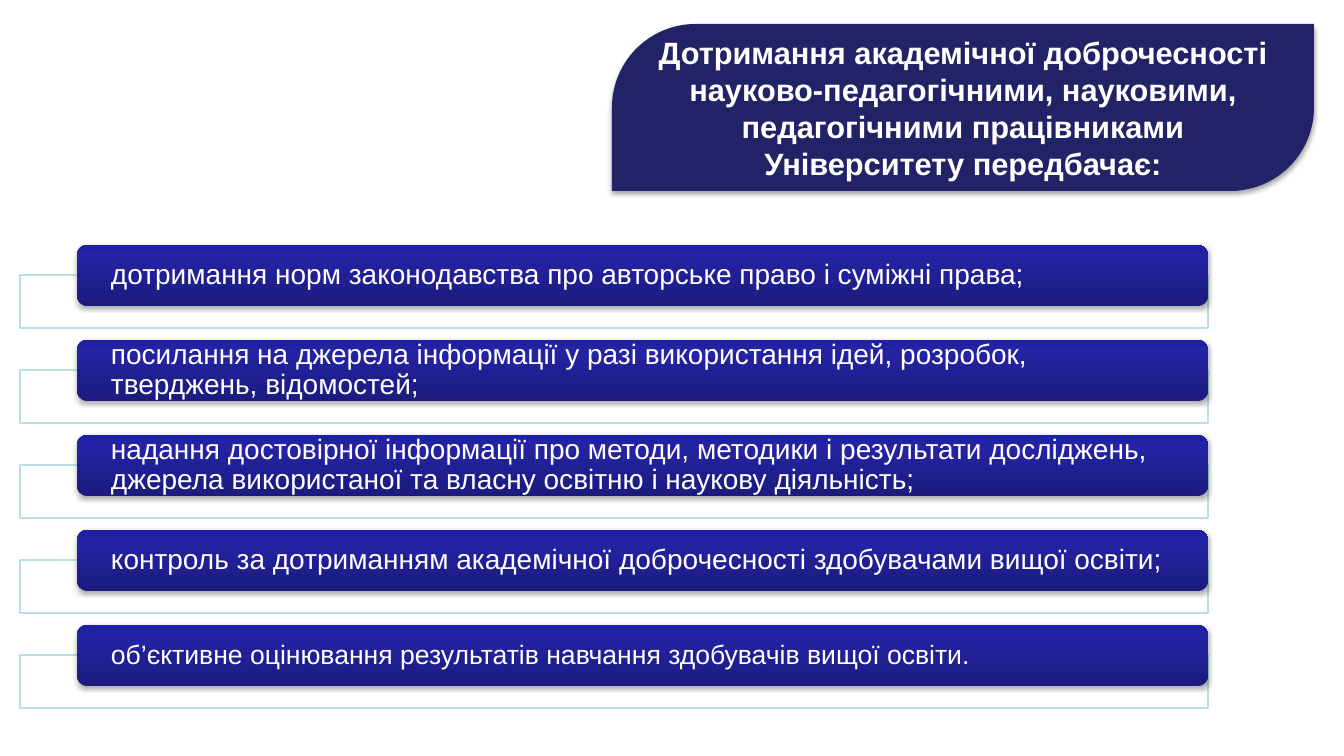
"""Build a slide on academic integrity duties of university staff."""
from lxml import etree
from pptx import Presentation, util as u
from pptx.dml.color import RGBColor
from pptx.enum import shapes, text
from pptx.oxml import parse_xml
from pptx.oxml.ns import qn

SCALE = 12192000 / 1344
NAMESPACE = 'xmlns:a="http://schemas.openxmlformats.org/drawingml/2006/main"'
SHADOW = f"""<a:effectLst {NAMESPACE}>
<a:outerShdw blurRad="39370" dist="22860" dir="5400000" rotWithShape="0">
<a:srgbClr val="000000"><a:alpha val="35000"/></a:srgbClr></a:outerShdw></a:effectLst>"""
GRADIENT = f"""<a:gradFill {NAMESPACE} rotWithShape="1"><a:gsLst>
<a:gs pos="0"><a:srgbClr val="1B1B7E"/></a:gs>
<a:gs pos="80000"><a:srgbClr val="2323A3"/></a:gs>
<a:gs pos="100000"><a:srgbClr val="2020A6"/></a:gs>
</a:gsLst><a:lin ang="16200000" scaled="0"/></a:gradFill>"""
DUTIES = [
    ("дотримання норм законодавства про авторське право і суміжні права;", 20),
    ("посилання на джерела інформації у разі використання ідей, розробок, "
     "тверджень, відомостей;", 20),
    ("надання достовірної інформації про методи, методики і результати досліджень, "
     "джерела використаної та власну освітню і наукову діяльність;", 20),
    ("контроль за дотриманням академічної доброчесності здобувачами вищої освіти;", 20),
    ("об’єктивне оцінювання результатів навчання здобувачів вищої освіти.", 19),
]
PITCH = 95


def px(*lengths):
    return [u.Emu(round(length * SCALE)) for length in lengths]


def write(shape, words, size, bold, align, margin):
    frame = shape.text_frame
    frame.text = words
    frame.word_wrap = True
    frame.auto_size = text.MSO_AUTO_SIZE.NONE
    frame.vertical_anchor = text.MSO_ANCHOR.MIDDLE
    frame.margin_left = frame.margin_right = px(margin)[0]
    frame.margin_top = frame.margin_bottom = 0
    paragraph = frame.paragraphs[0]
    paragraph.alignment = align
    font = paragraph.runs[0].font
    font.name, font.size, font.bold = "Arial", u.Pt(size), bold
    font.color.rgb = RGBColor.from_string("FFFFFF")
    return paragraph


presentation = Presentation()
presentation.slide_width, presentation.slide_height = px(1344, 756)
slide = presentation.slides.add_slide(presentation.slide_layouts[5])

title = slide.shapes.title
title_box = px(612, 24, 702, 167)
title.left, title.top, title.width, title.height = title_box
write(title, "Дотримання академічної доброчесності науково-педагогічними, науковими, "
      "педагогічними працівниками Університету передбачає:",
      22, True, text.PP_ALIGN.CENTER, 34)

panel = slide.shapes.add_shape(shapes.MSO_SHAPE.ROUND_2_DIAG_RECTANGLE, *title_box)
panel.adjustments[0] = 0.5
panel.fill.solid()
panel.fill.fore_color.rgb = RGBColor.from_string("222267")
panel.line.fill.background()
panel._element.spPr.append(parse_xml(SHADOW))
title._element.addprevious(panel._element)

for row, (duty, size) in enumerate(DUTIES):
    top = 245 + row * PITCH
    frame_box = slide.shapes.add_shape(shapes.MSO_SHAPE.RECTANGLE, *px(20, top + 30, 1188, 53))
    frame_box.shadow.inherit = False
    frame_box.fill.solid()
    frame_box.fill.fore_color.rgb = RGBColor.from_string("FFFFFF")
    white = frame_box._element.spPr.find(qn("a:solidFill"))[0]
    etree.SubElement(white, qn("a:alpha"), val="90000")
    frame_box.line.color.rgb = RGBColor.from_string("BBE0E3")
    frame_box.line.width = u.Pt(2)

    bar = slide.shapes.add_shape(shapes.MSO_SHAPE.ROUNDED_RECTANGLE, *px(77, top, 1131, 61))
    bar.line.fill.background()
    bar._element.spPr.find(qn("a:ln")).addprevious(parse_xml(GRADIENT))
    bar._element.spPr.append(parse_xml(SHADOW))
    paragraph = write(bar, duty, size, False, text.PP_ALIGN.LEFT, 31)
    paragraph.line_spacing = 0.9

presentation.save("out.pptx")
